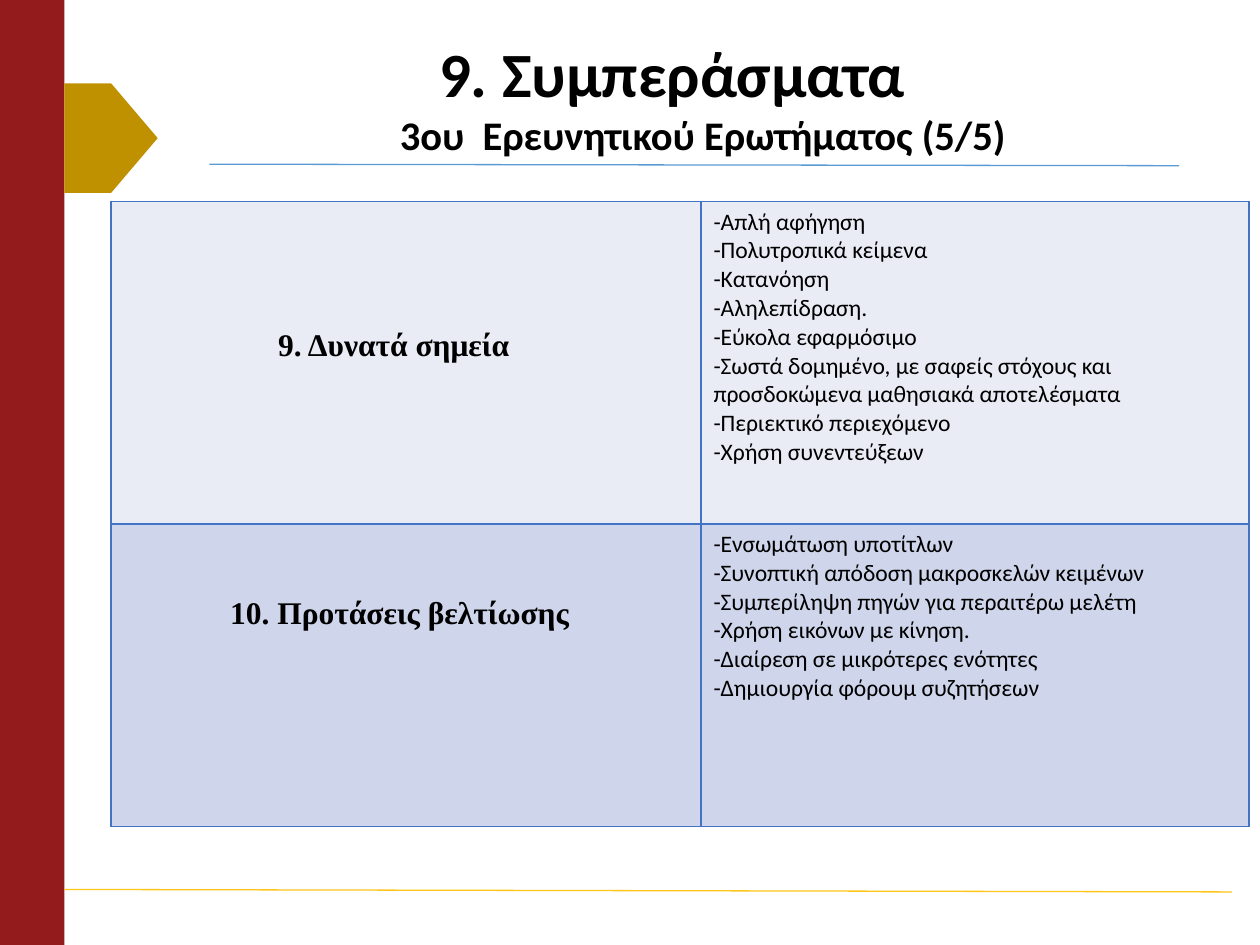
from lxml.etree import SubElement
from pptx import Presentation
from pptx.dml.color import RGBColor
from pptx.enum.shapes import MSO_CONNECTOR as Connector, MSO_SHAPE as Shape
from pptx.enum.text import MSO_ANCHOR as Anchor, PP_ALIGN as Align
from pptx.oxml.ns import qn
from pptx.util import Cm, Pt

# Content
TITLE = "9. Συμπεράσματα "
SUBTITLE = "3ου  Ερευνητικού Ερωτήματος (5/5)"
ROWS = [  # height, fill, findings
    (6.5, "E9EBF5", [
        "-Απλή αφήγηση",
        "-Πολυτροπικά κείμενα",
        "-Κατανόηση",
        "-Αληλεπίδραση.",
        "-Εύκολα εφαρμόσιμο",
        "-Σωστά δομημένο, με σαφείς στόχους και προσδοκώμενα μαθησιακά αποτελέσματα",
        "-Περιεκτικό περιεχόμενο",
        "-Χρήση συνεντεύξεων",
    ]),
    (6.1, "CFD5EA", [
        "-Ενσωμάτωση υποτίτλων",
        "-Συνοπτική απόδοση μακροσκελών κειμένων",
        "-Συμπερίληψη πηγών για περαιτέρω μελέτη",
        "-Χρήση εικόνων με κίνηση.",
        "-Διαίρεση σε μικρότερες ενότητες",
        "-Δημιουργία φόρουμ συζητήσεων",
    ]),
]
LABELS = [  # text, (left, top, width, height)
    ("9. Δυνατά σημεία", (5.36, 6.43, 5.79, 1.7)),
    ("10. Προτάσεις βελτίωσης", (4.39, 11.84, 7.77, 1.02)),
]
COLUMNS = (11.89, 11.05)
TABLE_AT = (2.24, 4.06)
BANDS = [  # shape, (left, top, width, height), fill
    (Shape.RECTANGLE, (0, 0, 1.3, 19.05), "931B1B"),
    (Shape.PENTAGON, (1.3, 1.68, 1.88, 2.21), "BF9000"),
]
RULES = [  # (start x, start y, end x, end y), colour
    ((4.22, 3.31, 23.77, 3.34), "5B9BD5"),
    ((1.3, 17.93, 24.84, 17.98), "FFC61A"),
]
BORDER = "4472C4"


def cm(values):
    return [Cm(value) for value in values]


def color(code):
    return RGBColor.from_string(code)


def style(para, size, font="Calibri", bold=False):
    for span in para.runs:
        span.font.size = Pt(size)
        span.font.name = font
        span.font.bold = bold
        span.font.color.rgb = color("000000")


def add_text(page, place, text):
    box = page.shapes.add_textbox(*cm(place))
    box.text_frame.word_wrap = True
    box.text_frame.text = text
    return box.text_frame


def add_borders(cell):
    props = cell._tc.get_or_add_tcPr()
    for position, side in enumerate(("lnL", "lnR", "lnT", "lnB")):
        line = SubElement(props, qn("a:" + side), w=str(Pt(1)))
        fill = SubElement(line, qn("a:solidFill"))
        SubElement(fill, qn("a:srgbClr"), val=BORDER)
        props.insert(position, line)


deck = Presentation()
deck.slide_width, deck.slide_height = cm((25.4, 19.05))
page = deck.slides.add_slide(deck.slide_layouts[6])

# Side band, arrow tab and rules
for kind, place, fill in BANDS:
    band = page.shapes.add_shape(kind, *cm(place))
    band.shadow.inherit = False
    band.fill.solid()
    band.fill.fore_color.rgb = color(fill)
    band.line.fill.background()

for ends, tint in RULES:
    rule = page.shapes.add_connector(Connector.STRAIGHT, *cm(ends))
    rule.line.color.rgb = color(tint)
    rule.line.width = Pt(0.75)
    SubElement(rule._element.spPr, qn("a:effectLst"))

# Title with a raised, slightly indented second line
frame = add_text(page, (2.9, 1.07, 21.59, 2.49), f"{TITLE}\n{SUBTITLE}")
frame.vertical_anchor = Anchor.MIDDLE
heading, subheading = frame.paragraphs
for para, size in ((heading, 36), (subheading, 40)):
    para.alignment = Align.CENTER
    para.line_spacing = 0.9
    style(para, size, bold=True)
subheading.runs[0].font._element.set("baseline", "30000")
subheading._p.get_or_add_pPr().set("marL", str(Cm(0.95)))

# Findings table
width, height = sum(COLUMNS), sum(row[0] for row in ROWS)
table = page.shapes.add_table(len(ROWS), len(COLUMNS),
                              *cm((*TABLE_AT, width, height))).table
for column, size in zip(table.columns, COLUMNS):
    column.width = Cm(size)
for row, (size, fill, findings) in zip(table.rows, ROWS):
    row.height = Cm(size)
    for cell in row.cells:
        cell.fill.solid()
        cell.fill.fore_color.rgb = color(fill)
        add_borders(cell)
    body = row.cells[1].text_frame
    body.text = "\n".join(findings)
    for para in body.paragraphs:
        style(para, 13.5)

# Row labels
for text, place in LABELS:
    label = add_text(page, place, text)
    style(label.paragraphs[0], 18, "Times New Roman", bold=True)

deck.save("out.pptx")
